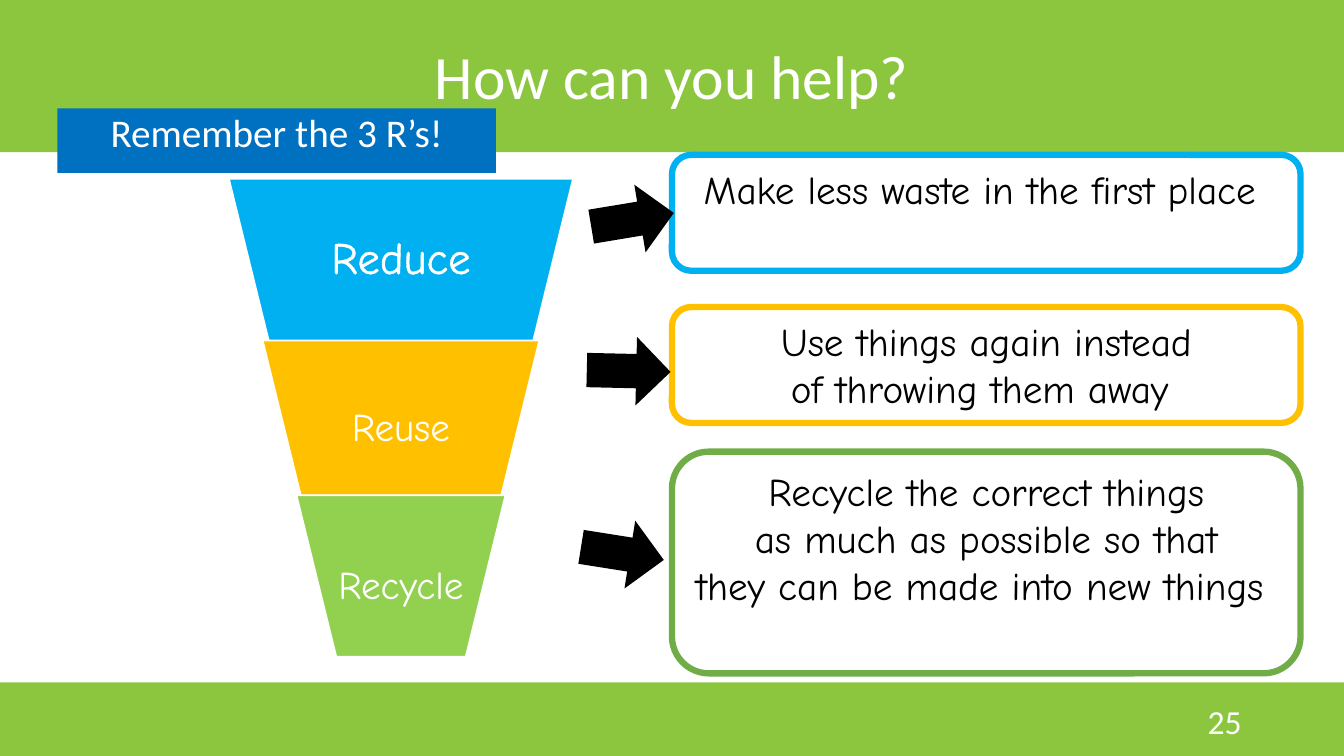
"""Build the slide on the three R's: a funnel with an explanation beside each step."""
from lxml.etree import SubElement
from pptx import Presentation
from pptx.dml.color import RGBColor
from pptx.enum.shapes import MSO_SHAPE
from pptx.enum.text import MSO_ANCHOR, MSO_AUTO_SIZE, PP_ALIGN
from pptx.oxml import parse_xml
from pptx.oxml.ns import qn
from pptx.util import Pt

HUES = {"white": "FFFFFF", "black": "000000", "band": "8CC63F", "tag": "0070C0",
        "blue": "00B0F0", "gold": "FFC000", "lime": "92D050", "green": "70AD47"}
MID = 286.4
HARD = chr(160)


def draw(kind, left, top, width, height, fill=None, line=None, weight=1):
    shape = slide.shapes.add_shape(kind, Pt(left), Pt(top), Pt(width), Pt(height))
    shape.shadow.inherit = False
    if fill:
        shape.fill.solid()
        shape.fill.fore_color.rgb = RGBColor.from_string(HUES[fill])
    else:
        shape.fill.background()
    if line:
        shape.line.color.rgb = RGBColor.from_string(HUES[line])
        shape.line.width = Pt(weight)
    else:
        shape.line.fill.background()
    return shape


def write(shape, text, size, face, hue="white", anchor=MSO_ANCHOR.MIDDLE,
          align=PP_ALIGN.CENTER, space=1.0):
    frame = shape.text_frame
    frame.word_wrap = True
    frame.auto_size = MSO_AUTO_SIZE.NONE
    frame.vertical_anchor = anchor
    para = frame.paragraphs[0]
    para.text = text
    para.alignment = align
    para.line_spacing = space
    para.space_before = Pt(0)
    props = para._p.get_or_add_pPr()
    props.set("marL", "0")
    props.set("indent", "0")
    SubElement(props, qn("a:buNone"))
    font = para.font
    font.size = Pt(size)
    font.name = face
    font.color.rgb = RGBColor.from_string(HUES[hue])
    return para


deck = Presentation()
deck.slide_width, deck.slide_height = Pt(960), Pt(540)
slide = deck.slides.add_slide(deck.slide_layouts[1])
tree = slide.shapes._spTree

for top, height in [(0, 108.7), (487.5, 52.5)]:
    band = draw(MSO_SHAPE.RECTANGLE, 0, top, 960, height, "band")
    tree.insert(2, band._element)

title = slide.shapes.title
title.left, title.top, title.width, title.height = Pt(0), Pt(4.3), Pt(960), Pt(104.4)
write(title, "How can you help?", 44, "Calibri", space=0.9)

tag = slide.placeholders[1]
tag.left, tag.top, tag.width, tag.height = Pt(41), Pt(77.5), Pt(313.2), Pt(46)
tag.fill.solid()
tag.fill.fore_color.rgb = RGBColor.from_string(HUES["tag"])
write(tag, "Remember the 3 R’s!", 28, "Calibri", anchor=MSO_ANCHOR.TOP, space=0.9)

page = slide.shapes.add_textbox(Pt(678), Pt(500.4), Pt(216), Pt(28.8))
write(page, "25", 24, "Calibri", align=PP_ALIGN.RIGHT)

steps = [("Reduce", 32, "blue", 127.8, 245.5, 115.2, 127.8, 159.8),
         ("Reuse", 28, "gold", 243.4, 197.3, 110.2, 259.2, 91.4),
         ("Recycle", 28, "lime", 353.8, 149, 115.2, 368.9, 110.9)]
for name, size, hue, top, width, height, start, span in steps:
    step = draw(MSO_SHAPE.TRAPEZOID, MID - width / 2, top, width, height, hue, "white")
    step.adjustments[0] = 0.246
    step.rotation = 180
    label = slide.shapes.add_textbox(Pt(MID - span / 2), Pt(start), Pt(span),
                                     Pt(top + height - start))
    frame = label.text_frame
    frame.margin_left = frame.margin_right = Pt(2.9)
    frame.margin_top = frame.margin_bottom = Pt(2.9)
    para = write(label, name, size, "Comic Neue", space=0.9)
    if name == "Reduce":
        edge = parse_xml(
            '<a:ln xmlns:a="http://schemas.openxmlformats.org/drawingml/2006/main" w="9525">'
            f'<a:solidFill><a:srgbClr val="{HUES["white"]}"/></a:solidFill></a:ln>')
        para.font._rPr.insert(0, edge)

notes = [("Make less waste in the first place ", "blue", 110.6, 82.8, 421.9, 132.5, 350.6),
         ("Use things again instead of~throwing them away~", "gold",
          219.3, 82.8, 419.2, 240.5, 1.3),
         ("Recycle the correct things as~much as~possible so that "
          "they~can be made into new things~", "green", 322.6, 158.4, 414.7, 370.8, 9)]
for text, hue, top, height, left, start, turn in notes:
    box = draw(MSO_SHAPE.ROUNDED_RECTANGLE, 480, top, 449, height, line=hue, weight=4.5)
    write(box, text.replace("~", HARD), 28, "Comic Neue", "black", MSO_ANCHOR.TOP)
    arrow = draw(MSO_SHAPE.RIGHT_ARROW, left, start, 59.8, 49, "black")
    arrow.rotation = turn

deck.save("out.pptx")
